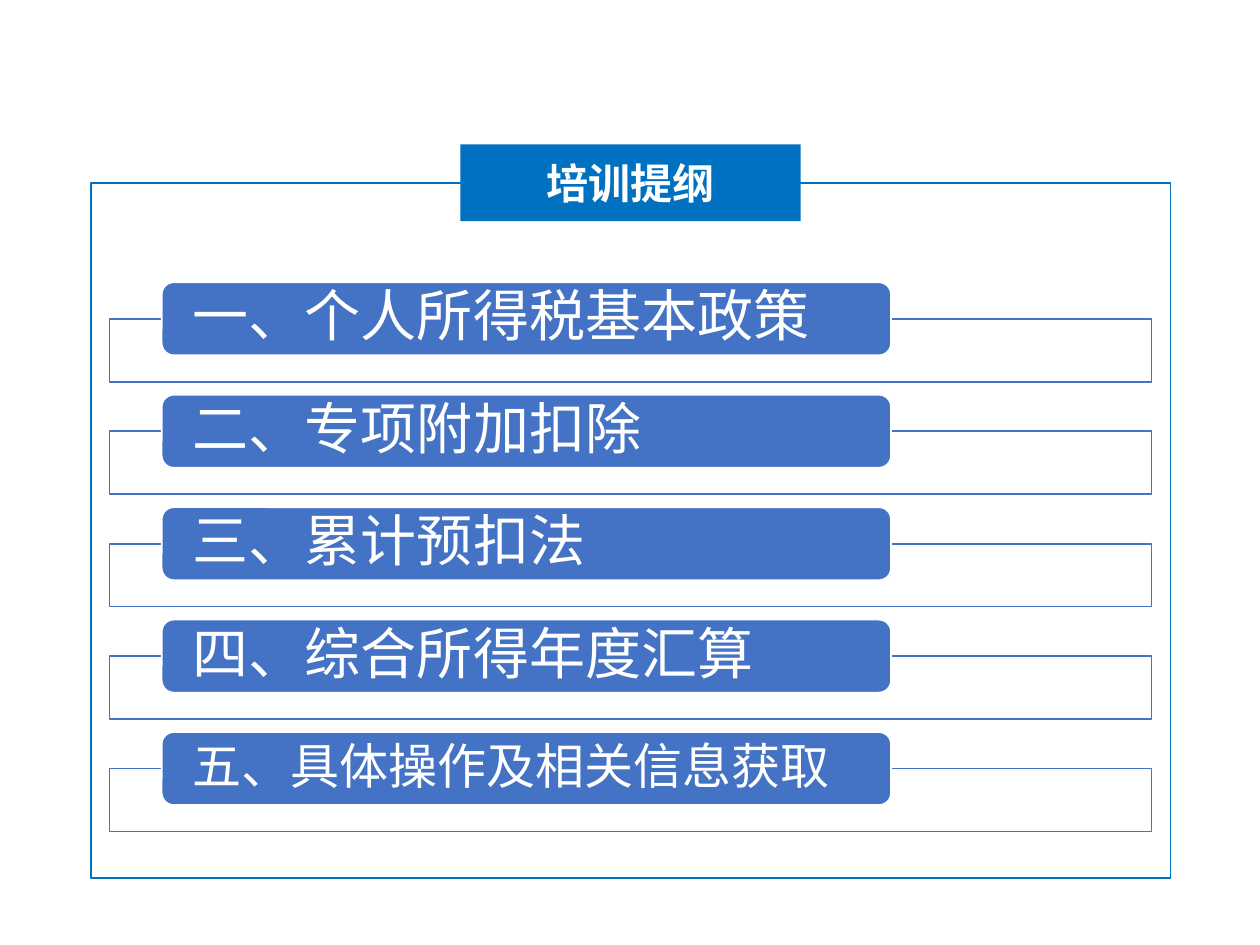
from lxml.etree import SubElement
from pptx import Presentation
from pptx.dml.color import RGBColor
from pptx.enum.shapes import MSO_SHAPE
from pptx.enum.text import MSO_ANCHOR, PP_ALIGN
from pptx.oxml.ns import qn
from pptx.util import Inches, Pt

WHITE, BLUE, STEEL = "FFFFFF", "0070C0", "4472C4"
CJK = "Noto Sans CJK SC"
TOPICS = [
    ("一、个人所得税基本政策", 32),
    ("二、专项附加扣除", 32),
    ("三、累计预扣法", 32),
    ("四、综合所得年度汇算", 32),
    ("五、具体操作及相关信息获取", 28),
]


def color(code):
    return RGBColor.from_string(code)


def add_box(slide, kind, box, fill, line=None, alpha=None):
    shape = slide.shapes.add_shape(kind, *[Inches(v) for v in box])
    shape.shadow.inherit = False
    shape.fill.solid()
    shape.fill.fore_color.rgb = color(fill)
    if alpha is not None:
        tone = shape.fill._xPr.find(".//" + qn("a:srgbClr"))
        SubElement(tone, qn("a:alpha")).set("val", str(alpha * 1000))
    if line:
        shape.line.color.rgb = color(line)
        shape.line.width = Pt(1)
    else:
        shape.line.fill.background()
    return shape


def add_text(shape, text, size, font="Calibri", tint=WHITE, bold=False,
             align=PP_ALIGN.LEFT, inset=0.1, spacing=None):
    frame = shape.text_frame
    frame.word_wrap = True
    frame.vertical_anchor = MSO_ANCHOR.MIDDLE
    frame.margin_left = frame.margin_right = Inches(inset)
    frame.margin_top = frame.margin_bottom = 0
    para = frame.paragraphs[0]
    para.alignment = align
    if spacing:
        para.line_spacing = spacing
    run = para.add_run()
    run.text = text
    run.font.size = Pt(size)
    run.font.bold = bold
    run.font.color.rgb = color(tint)
    run.font.name = font
    # East Asian typeface
    SubElement(run.font._element, qn("a:ea")).set("typeface", CJK)


def add_panel(slide, box, title):
    """Outlined frame with a title tab centred over its top edge."""
    left, top, width, _ = box
    add_box(slide, MSO_SHAPE.RECTANGLE, box, WHITE, BLUE)
    tab_w, tab_h = 2.7, 0.61
    tab = add_box(slide, MSO_SHAPE.ROUNDED_RECTANGLE,
                  (left + (width - tab_w) / 2, top - tab_h / 2, tab_w, tab_h), BLUE)
    tab.adjustments[0] = 0
    add_text(tab, title, 24, font=CJK, bold=True, align=PP_ALIGN.CENTER)


def add_topic(slide, box, text, size):
    """Blue label over the top edge of a thin frame."""
    left, top, width, height = box
    label_h, frame_h = 0.58, 0.5
    add_box(slide, MSO_SHAPE.RECTANGLE,
            (left, top + height - frame_h, width, frame_h), WHITE, STEEL, alpha=90)
    label = add_box(slide, MSO_SHAPE.ROUNDED_RECTANGLE,
                    (left + width * 0.05, top, width * 0.7, label_h), STEEL, WHITE)
    add_text(label, text, size, inset=0.22, spacing=0.9)


def add_topics(slide, box, topics):
    left, top, width, height = box
    row_h = 0.79
    pitch = (height - row_h) / (len(topics) - 1)
    for i, (text, size) in enumerate(topics):
        add_topic(slide, (left, top + i * pitch, width, row_h), text, size)


def main():
    deck = Presentation()
    deck.slide_width, deck.slide_height = Inches(10), Inches(7.5)
    slide = deck.slides.add_slide(deck.slide_layouts[6])
    add_panel(slide, (0.72, 1.45, 8.57, 5.52), "培训提纲")
    add_topics(slide, (0.87, 2.24, 8.27, 4.36), TOPICS)
    deck.save("out.pptx")


if __name__ == "__main__":
    main()
